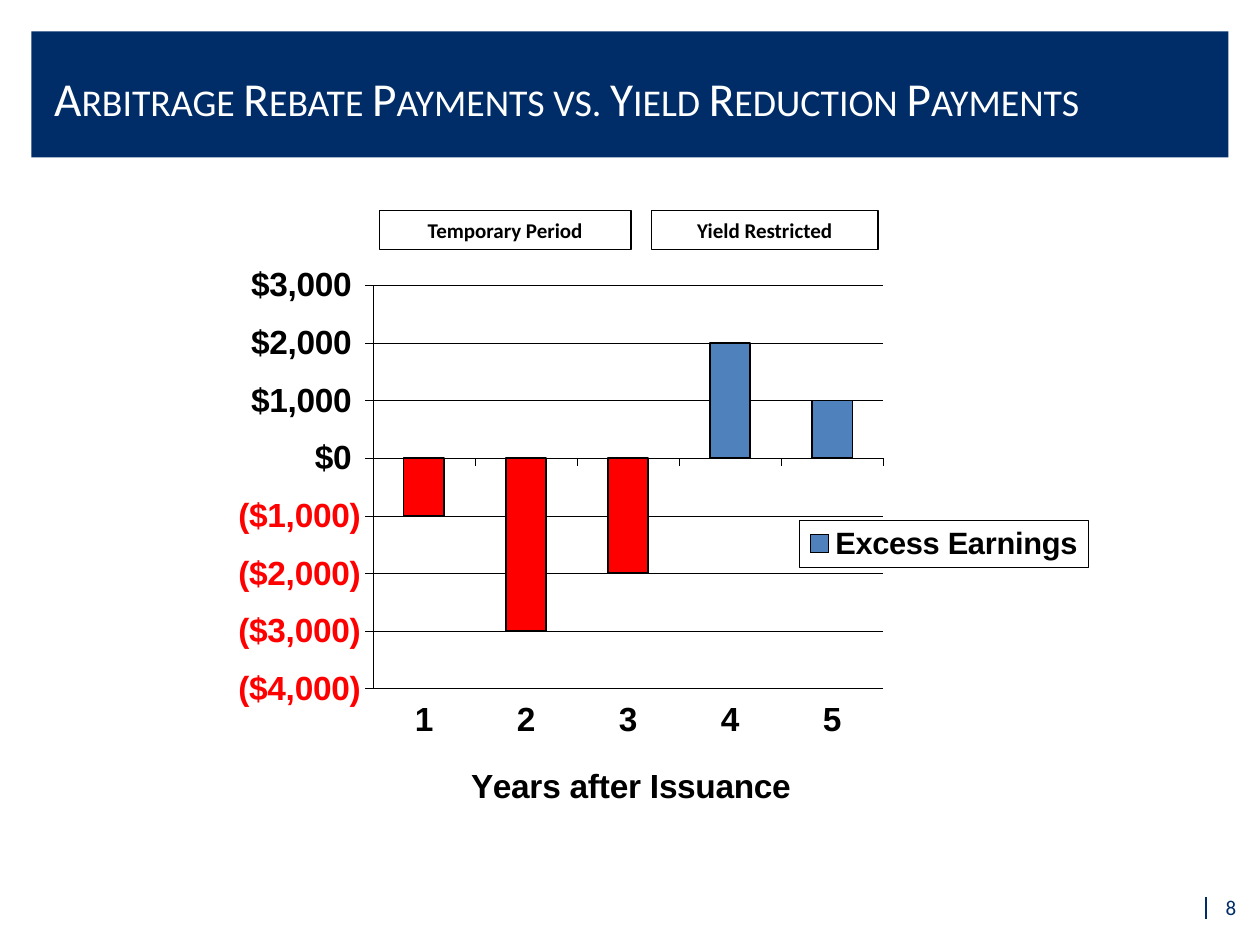
from lxml import etree
from pptx import Presentation
from pptx.chart.data import CategoryChartData
from pptx.dml.color import RGBColor
from pptx.enum.chart import XL_CHART_TYPE as ChartType, XL_LEGEND_POSITION as LegendPosition
from pptx.enum.chart import XL_TICK_LABEL_POSITION as LabelPosition, XL_TICK_MARK as TickMark
from pptx.enum.shapes import MSO_CONNECTOR as Connector, MSO_SHAPE as Shape
from pptx.enum.text import MSO_ANCHOR as Anchor, PP_ALIGN as Align
from pptx.oxml import parse_xml
from pptx.oxml.ns import nsdecls, qn
from pptx.util import Inches, Pt

# Content
TITLE = "Arbitrage Rebate Payments vs. Yield Reduction Payments"
PAGE_NUMBER = "8"
PERIODS = [("Temporary Period", 3.01, 2.0), ("Yield Restricted", 5.17, 1.8)]  # text, left, width
YEARS = ["1", "2", "3", "4", "5"]
SERIES_NAME = "Excess Earnings"
EARNINGS = [-1000, -3000, -2000, 2000, 1000]
AXIS_TITLE = "Years after Issuance"
MONEY = '"$"#,##0_);[Red]\\("$"#,##0\\)'
NAVY, WHITE, BLACK, BLUE, RED = "002D68", "FFFFFF", "000000", "4F81BD", "FF0000"


def color(value):
    return RGBColor.from_string(value)


def fill_with(fill, value):
    fill.solid()
    fill.fore_color.rgb = color(value)


def style_line(line, value, width):
    line.color.rgb = color(value)
    line.width = Pt(width)


def style_font(font, size, value, name="Calibri", bold=False):
    font.size, font.name, font.bold = Pt(size), name, bold
    font.color.rgb = color(value)


def place(shape, left, top, width, height):
    shape.left, shape.top = Inches(left), Inches(top)
    shape.width, shape.height = Inches(width), Inches(height)


def set_layout(element, followers, target=None, **fractions):
    """Give a chart part a manual layout, placed before the following tags."""
    for old in element.findall(qn("c:layout")):
        element.remove(old)
    parts = [("layoutTarget", target)] if target else []
    parts += [("xMode", "edge"), ("yMode", "edge"), *fractions.items()]
    body = "".join(f'<c:{tag} val="{value}"/>' for tag, value in parts)
    layout = parse_xml(f'<c:layout {nsdecls("c")}><c:manualLayout>{body}</c:manualLayout></c:layout>')
    tags = {qn(tag) for tag in followers}
    index = next((i for i, child in enumerate(element) if child.tag in tags), len(element))
    element.insert(index, layout)


deck = Presentation()
deck.slide_width, deck.slide_height = Inches(10), Inches(7.5)
page = deck.slides.add_slide(deck.slide_layouts[5])
shapes = page.shapes

# Title band, behind the title
band = shapes.add_shape(Shape.RECTANGLE, Inches(0.25), Inches(0.25), Inches(9.5), Inches(1))
band.shadow.inherit = False
fill_with(band.fill, NAVY)
band.line.fill.background()
title = shapes.title
title._element.addprevious(band._element)
place(title, 0.33, 0.3, 8.5, 0.95)
title.text_frame.text = TITLE
title.text_frame.vertical_anchor = Anchor.MIDDLE
para = title.text_frame.paragraphs[0]
para.alignment = Align.LEFT
style_font(para.font, 27, WHITE)
para.runs[0]._r.get_or_add_rPr().set("cap", "small")

# Page number and its rule
rule = shapes.add_connector(Connector.STRAIGHT, Inches(9.57), Inches(7.12), Inches(9.57), Inches(7.29))
style_line(rule.line, NAVY, 1)
etree.SubElement(rule._element.spPr, qn("a:effectLst"))
number = shapes.add_textbox(Inches(7.58), Inches(7), Inches(2.33), Inches(0.4)).text_frame
number.word_wrap = True
number.vertical_anchor = Anchor.MIDDLE
number.text = PAGE_NUMBER
number.paragraphs[0].alignment = Align.RIGHT
style_font(number.paragraphs[0].font, 12, NAVY)

# Period labels
for text, left, width in PERIODS:
    box = shapes.add_shape(Shape.RECTANGLE, Inches(left), Inches(1.67), Inches(width), Inches(0.31))
    box.shadow.inherit = False
    box.fill.background()
    style_line(box.line, BLACK, 0.75)
    box.text_frame.text = text
    box.text_frame.vertical_anchor = Anchor.MIDDLE
    para = box.text_frame.paragraphs[0]
    para.alignment = Align.CENTER
    style_font(para.font, 12, BLACK, bold=True)

# Chart
data = CategoryChartData()
data.categories = YEARS
data.add_series(SERIES_NAME, EARNINGS)
chart = shapes.add_chart(ChartType.COLUMN_CLUSTERED, Inches(1.74), Inches(2.01),
                         Inches(6.97), Inches(4.61), data).chart
chart.has_title = False
style_font(chart.font, 19.1, BLACK, "Arial", True)
plot = chart.plots[0]
plot.gap_width = 150
plot.vary_by_categories = False
set_layout(chart._chartSpace.chart.plotArea, ["c:barChart"], "inner", x=0.175, y=0.055, w=0.581, h=0.695)

# Columns: losses in red
series = plot.series[0]
series.invert_if_negative = False
fill_with(series.format.fill, BLUE)
style_line(series.format.line, BLACK, 1.06)
for index, value in enumerate(EARNINGS):
    if value < 0:
        point = series.points[index].format
        fill_with(point.fill, RED)
        style_line(point.line, BLACK, 1.06)

# Axes
years, money = chart.category_axis, chart.value_axis
for axis in (years, money):
    axis.major_tick_mark, axis.minor_tick_mark = TickMark.OUTSIDE, TickMark.NONE
    style_line(axis.format.line, BLACK, 0.27)
    style_font(axis.tick_labels.font, 19.1, BLACK, "Arial", True)
years.tick_label_position = LabelPosition.LOW
years.has_major_gridlines = False
years.axis_title.text_frame.text = AXIS_TITLE
style_font(years.axis_title.text_frame.paragraphs[0].font, 19.1, BLACK, "Arial", True)
set_layout(years.axis_title._element, ["c:overlay", "c:spPr", "c:txPr"], x=0.28, y=0.87)
money.minimum_scale, money.maximum_scale, money.major_unit = -4000, 3000, 1000
money.tick_labels.number_format = MONEY
money.tick_labels.number_format_is_linked = False
money.has_major_gridlines = True
style_line(money.major_gridlines.format.line, BLACK, 0.27)

# Legend
chart.has_legend = True
legend = chart.legend
legend.position = LegendPosition.RIGHT
legend.include_in_layout = False
style_font(legend.font, 17.6, BLACK, "Arial", True)
set_layout(legend._element, ["c:overlay", "c:spPr", "c:txPr"], x=0.66, y=0.46, w=0.33, h=0.08)
legend._element.find(qn("c:txPr")).addprevious(parse_xml(
    f'<c:spPr {nsdecls("c", "a")}><a:solidFill><a:srgbClr val="{WHITE}"/></a:solidFill>'
    f'<a:ln w="3400"><a:solidFill><a:srgbClr val="{BLACK}"/></a:solidFill></a:ln></c:spPr>'))

deck.save("out.pptx")
